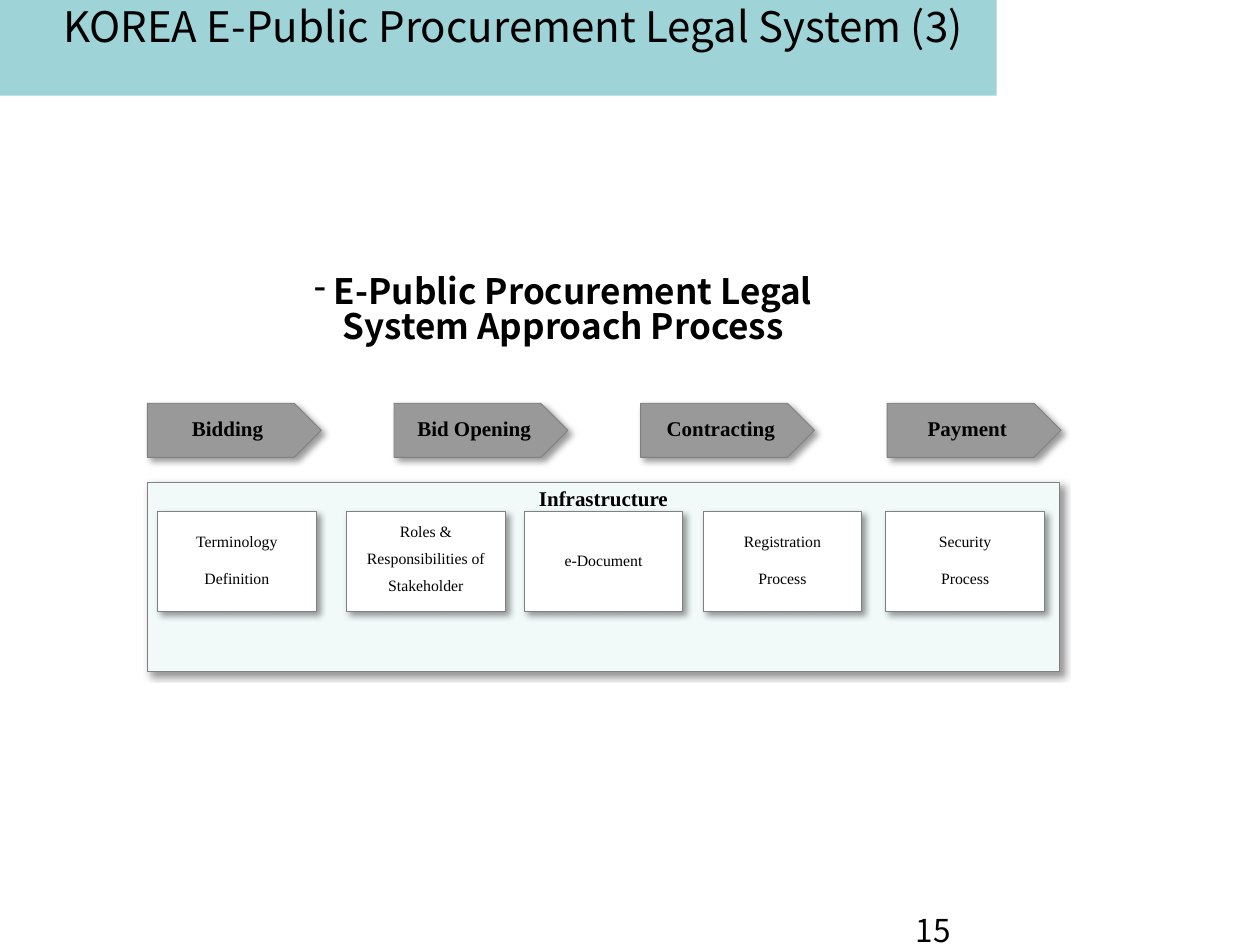
from lxml.etree import SubElement
from pptx import Presentation
from pptx.dml.color import RGBColor
from pptx.enum.shapes import MSO_SHAPE
from pptx.enum.text import MSO_ANCHOR, PP_ALIGN
from pptx.oxml.ns import qn
from pptx.util import Inches, Pt

WIDTH, HEIGHT = Inches(10), Inches(7.5)
COLORS = {"band": "9ED3D7", "panel": "F1F9F9", "card": "FFFFFF",
          "step": "999999", "line": "808080", "text": "000000"}
SANS, SERIF = "Noto Sans CJK KR", "Times New Roman"
TITLE = {"name": SANS, "size": Pt(24)}
HEADING = {"name": SANS, "size": Pt(20), "bold": True}
NUMBER = {"name": SANS, "size": Pt(18)}
LABEL = {"name": SERIF, "size": Pt(12), "bold": True}
BODY = {"name": SERIF, "size": Pt(9)}
CENTER = {"alignment": PP_ALIGN.CENTER}
TIGHT = {**CENTER, "line_spacing": 0.95}

STEPS = ["Bidding", "Bid Opening", "Contracting", "Payment"]
CARDS = [
    (12.5, ["Terminology", "Definition"], 0.95, 10.5),
    (27.5, ["Roles &", "Responsibilities of", "Stakeholder"], 0.7, 8),
    (41.6, ["e-Document"], 0.95, 0),
    (55.8, ["Registration", "Process"], 0.95, 10.5),
    (70.3, ["Security", "Process"], 0.95, 10.5),
]


def color(key):
    """Return a palette colour."""
    return RGBColor.from_string(COLORS[key])


def place(x, y, w, h):
    """Turn percentages of the slide into lengths."""
    return [int(total * share / 100) for total, share in
            zip((WIDTH, HEIGHT, WIDTH, HEIGHT), (x, y, w, h))]


def apply(obj, values):
    """Set attributes from a dict."""
    for key, value in values.items():
        setattr(obj, key, value)


def write(sp, lines, font, para, anchor=MSO_ANCHOR.TOP, gap=0):
    """Fill a shape with equally formatted paragraphs."""
    tf = sp.text_frame
    apply(tf, {"word_wrap": True, "vertical_anchor": anchor})
    for i, line in enumerate(lines):
        p = tf.add_paragraph() if i else tf.paragraphs[0]
        apply(p, para)
        if i:
            p.space_before = Pt(gap)
        r = p.add_run()
        r.text = line
        apply(r.font, font)
        r.font.color.rgb = color("text")
    return tf


def add_text(s, box, text, font, para, anchor=MSO_ANCHOR.TOP):
    """Add a text box with one paragraph."""
    return write(s.shapes.add_textbox(*place(*box)), [text], font, para, anchor)


def add_shadow(sp):
    """Cast a soft shadow to the lower right."""
    effects = sp._element.spPr.find(qn("a:effectLst"))
    shadow = SubElement(effects, qn("a:outerShdw"), blurRad=str(Pt(4)),
                        dist=str(Pt(3)), dir="2700000", algn="tl", rotWithShape="0")
    tone = SubElement(shadow, qn("a:srgbClr"), val=COLORS["text"])
    SubElement(tone, qn("a:alpha"), val="40000")


def add_block(s, box, fill, kind=MSO_SHAPE.RECTANGLE, outlined=True):
    """Add a filled shape, outlined and shadowed on request."""
    sp = s.shapes.add_shape(kind, *place(*box))
    sp.shadow.inherit = False
    sp.fill.solid()
    sp.fill.fore_color.rgb = color(fill)
    if outlined:
        sp.line.color.rgb = color("line")
        sp.line.width = Pt(0.5)
        add_shadow(sp)
    else:
        sp.line.fill.background()
    apply(sp.text_frame, {"margin_left": Inches(0.04), "margin_right": Inches(0.04),
                          "margin_top": Inches(0.04), "margin_bottom": Inches(0.05)})
    return sp


def add_heading(s, box, text):
    """Add the centred heading with its dash bullet."""
    tf = add_text(s, box, text, HEADING, {**CENTER, "line_spacing": 0.83},
                  MSO_ANCHOR.MIDDLE)
    pPr = tf.paragraphs[0]._p.get_or_add_pPr()
    pPr.set("marL", str(Inches(2)))
    pPr.set("indent", "0")
    SubElement(pPr, qn("a:buChar"), char="-")
    tabs = SubElement(pPr, qn("a:tabLst"))
    for stop in (0.69, 0.89, 3.39):
        SubElement(tabs, qn("a:tab"), pos=str(Inches(stop)), algn="l")


def main():
    """Build the slide."""
    prs = Presentation()
    prs.slide_width, prs.slide_height = WIDTH, HEIGHT
    s = prs.slides.add_slide(prs.slide_layouts[6])
    add_block(s, (0, 0, 79.1, 10.13), "band", outlined=False)
    add_text(s, (71.7, 95.73, 23.3, 4.27), "15", NUMBER, {})
    add_heading(s, (2, 27.87, 65.4, 10.27),
                " E-Public Procurement Legal System Approach Process")
    panel = add_block(s, (11.7, 51.07, 72.4, 20), "panel")
    write(panel, ["Infrastructure"], LABEL, TIGHT)
    for x, lines, spacing, gap in CARDS:
        card = add_block(s, (x, 54.13, 12.6, 10.53), "card")
        write(card, lines, BODY, {**CENTER, "line_spacing": spacing},
              MSO_ANCHOR.MIDDLE, gap)
    for i, step in enumerate(STEPS):
        sp = add_block(s, (11.7 + 19.57 * i, 42.67, 13.8, 5.73), "step",
                       MSO_SHAPE.PENTAGON)
        write(sp, [step], LABEL, TIGHT, MSO_ANCHOR.MIDDLE)
    add_text(s, (-4.3, 0, 90, 8), "KOREA E-Public Procurement Legal System (3)",
             TITLE, {**CENTER, "line_spacing": 0.9})
    prs.save("out.pptx")


if __name__ == "__main__":
    main()
